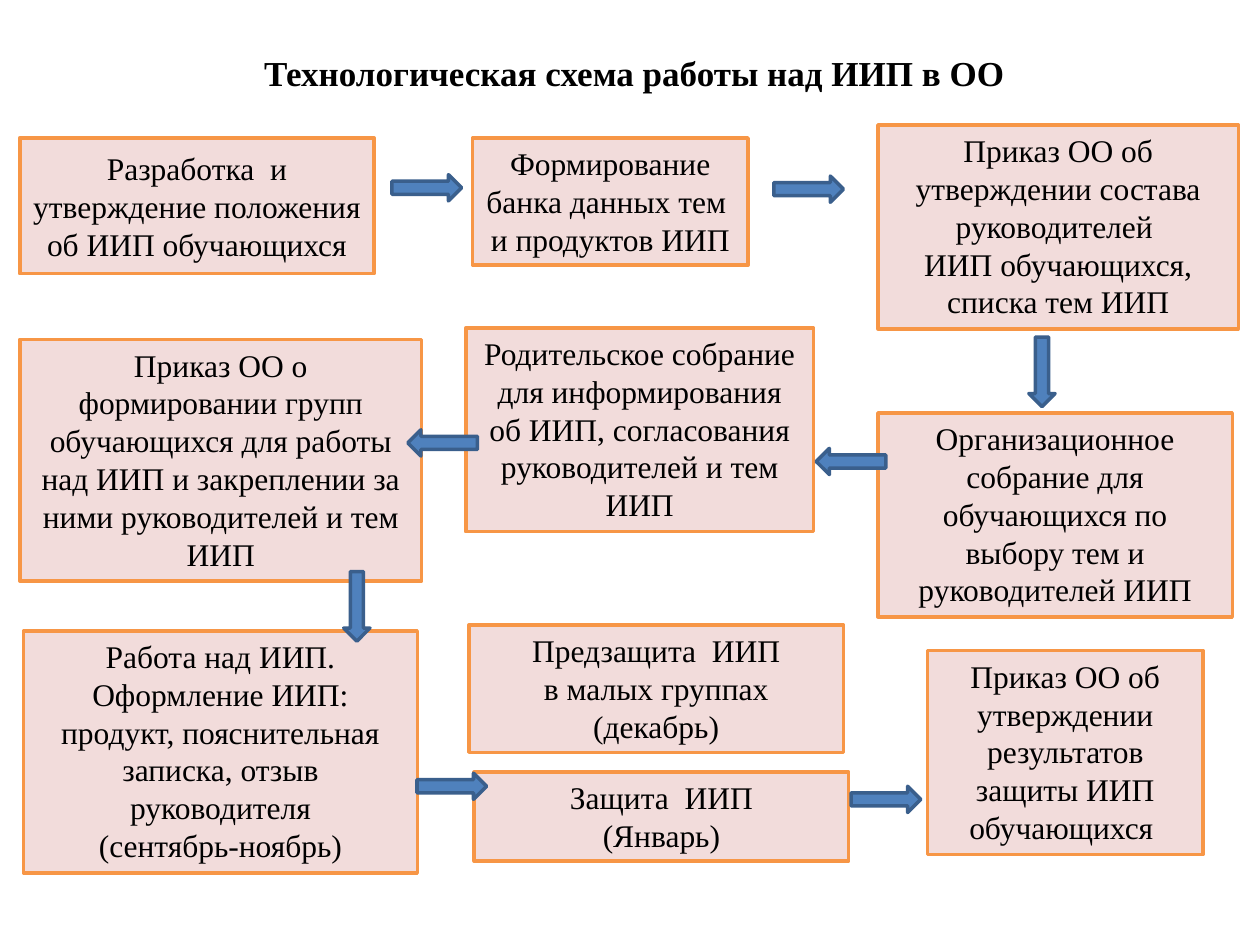
from pptx import Presentation
from pptx.dml.color import RGBColor
from pptx.enum import shapes, text
from pptx.util import Pt


def write(shape, content, size=18, bold=False, color="000000", anchor=text.MSO_ANCHOR.TOP):
    """Fill a shape with centred text, one paragraph per line of content."""
    frame = shape.text_frame
    frame.text = content
    frame.word_wrap = True
    frame.auto_size = text.MSO_AUTO_SIZE.NONE
    frame.vertical_anchor = anchor
    for paragraph in frame.paragraphs:
        paragraph.alignment = text.PP_ALIGN.CENTER
        for run in paragraph.runs:
            run.font.name = "Times New Roman"
            run.font.size = Pt(size)
            run.font.bold = bold
            run.font.color.rgb = RGBColor.from_string(color)


def add_block(kind, left, top, width, height, fill, line):
    block = slide.shapes.add_shape(kind, Pt(left), Pt(top), Pt(width), Pt(height))
    block.shadow.inherit = False
    block.fill.solid()
    block.fill.fore_color.rgb = RGBColor.from_string(fill)
    block.line.color.rgb = RGBColor.from_string(line)
    block.line.width = Pt(2)
    return block


prs = Presentation()
prs.slide_width, prs.slide_height = Pt(720), Pt(540)
slide = prs.slides.add_slide(prs.slide_layouts[5])

title = slide.shapes.title
title.left, title.top, title.width, title.height = Pt(105), Pt(26), Pt(515), Pt(32)
write(title, "Технологическая схема работы над ИИП в ОО", size=20, bold=True)

TOP, MIDDLE = text.MSO_ANCHOR.TOP, text.MSO_ANCHOR.MIDDLE
# left, top, width, height, anchor, wording
steps = [
    (11.3, 78.8, 202.5, 77.6, MIDDLE, "Разработка  и утверждение положения об ИИП обучающихся"),
    (270, 78.8, 157.5, 72.7, TOP, "Формирование банка данных тем  и продуктов ИИП"),
    (501.7, 71.4, 206, 116.5, TOP,
     "Приказ ОО об утверждении состава руководителей \nИИП обучающихся, списка тем ИИП"),
    (501.7, 236, 202.5, 116.5, TOP,
     "Организационное собрание для обучающихся по выбору тем и руководителей ИИП"),
    (266.2, 187.4, 198.7, 116.5, TOP,
     "Родительское собрание для информирования об ИИП, согласования руководителей и тем ИИП"),
    (11.3, 194, 229.7, 138, TOP,
     "Приказ ОО о формировании групп обучающихся для работы над ИИП "
     "и закреплении за ними руководителей и тем ИИП"),
    (13.5, 360.5, 225, 138.4, TOP,
     "Работа над ИИП. Оформление ИИП: продукт, пояснительная записка, "
     "отзыв руководителя\n(сентябрь-ноябрь)"),
    (268, 357.2, 214, 72.7, TOP, "Предзащита  ИИП\nв малых группах (декабрь)"),
    (271, 441.2, 214, 50.9, TOP, "Защита  ИИП\n(Январь)"),
    (530, 371.8, 157.5, 116.5, TOP,
     "Приказ ОО об утверждении результатов защиты ИИП обучающихся "),
]
for left, top, width, height, anchor, wording in steps:
    step = add_block(shapes.MSO_SHAPE.RECTANGLE, left, top, width, height, "F2DCDB", "F79646")
    write(step, wording, anchor=anchor)

RIGHT, DOWN, LEFT = 0, 90, 180
# left and top before rotation, direction
arrows = [
    (224, 99.8, RIGHT),
    (442.2, 100.6, RIGHT),
    (575.5, 205, DOWN),
    (466.4, 256.2, LEFT),
    (233, 245.6, LEFT),
    (184, 339, DOWN),
    (238.3, 441.8, RIGHT),
    (486.4, 449.3, RIGHT),
]
for left, top, direction in arrows:
    arrow = add_block(shapes.MSO_SHAPE.RIGHT_ARROW, left, top, 39.8, 15, "4F81BD", "3A5F8C")
    arrow.rotation = direction

prs.save("out.pptx")
